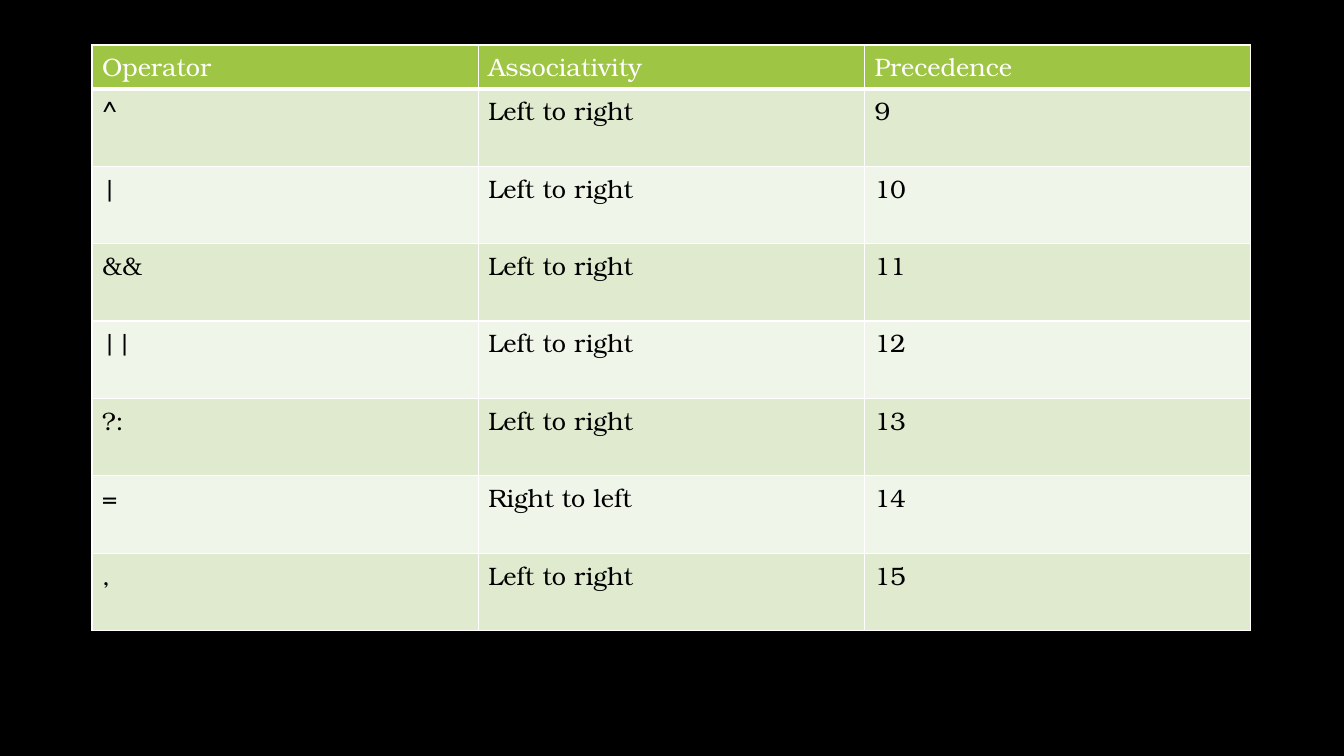
import lxml.etree
import pptx
import pptx.dml.color
import pptx.oxml.ns
import pptx.util

RGBColor = pptx.dml.color.RGBColor
BLACK = RGBColor(0x00, 0x00, 0x00)
WHITE = RGBColor(0xFF, 0xFF, 0xFF)
HEADER_GREEN = RGBColor(0x9E, 0xC5, 0x44)
BAND_COLORS = (RGBColor(0xDF, 0xEA, 0xCF), RGBColor(0xF0, 0xF5, 0xE9))

EMU_PER_PX = 914400 / 100.8
BLANK_LAYOUT = 6

HEADINGS = ("Operator", "Associativity", "Precedence")
OPERATORS = (
    ("^", "Left to right", "9"),
    ("|", "Left to right", "10"),
    ("&&", "Left to right", "11"),
    ("||", "Left to right", "12"),
    ("?:", "Left to right", "13"),
    ("=", "Right to left", "14"),
    (",", "Left to right", "15"),
)


def px(length):
    return pptx.util.Emu(round(length * EMU_PER_PX))


class SlideBuilder:
    font_name = "TeX Gyre Bonum"
    font_size = pptx.util.Pt(18)

    def __init__(self, presentation, background):
        layout = presentation.slide_layouts[BLANK_LAYOUT]
        self.slide = presentation.slides.add_slide(layout)
        fill = self.slide.background.fill
        fill.solid()
        fill.fore_color.rgb = background

    def add_border(self, cell, side, color, points):
        """Draw one cell edge; side is L, R, T or B."""
        properties = cell._tc.get_or_add_tcPr()
        line = lxml.etree.SubElement(
            properties, pptx.oxml.ns.qn(f"a:ln{side}"), w=str(pptx.util.Pt(points))
        )
        fill = lxml.etree.SubElement(line, pptx.oxml.ns.qn("a:solidFill"))
        lxml.etree.SubElement(fill, pptx.oxml.ns.qn("a:srgbClr"), val=str(color))

    def format_cell(self, cell, text, text_color, fill_color, bottom_points):
        for side, points in (("L", 1), ("R", 1), ("T", 1), ("B", bottom_points)):
            self.add_border(cell, side, WHITE, points)
        cell.fill.solid()
        cell.fill.fore_color.rgb = fill_color
        run = cell.text_frame.paragraphs[0].add_run()
        run.text = text
        run.font.name = self.font_name
        run.font.size = self.font_size
        run.font.bold = False
        run.font.color.rgb = text_color

    def add_table(self, left, top, width, height, header_height, headings, records):
        """Add a table with a header row and equal, banded body rows."""
        table = self.slide.shapes.add_table(
            len(records) + 1, len(headings), px(left), px(top), px(width), px(height)
        ).table
        for column in table.columns:
            column.width = px(width / len(headings))
        body_height = (height - header_height) / len(records)
        for index, texts in enumerate((headings, *records)):
            is_header = index == 0
            table.rows[index].height = px(header_height if is_header else body_height)
            text_color = WHITE if is_header else BLACK
            fill_color = HEADER_GREEN if is_header else BAND_COLORS[(index - 1) % 2]
            bottom_points = 3 if is_header else 1
            for cell, text in zip(table.rows[index].cells, texts):
                self.format_cell(cell, text, text_color, fill_color, bottom_points)


def main():
    presentation = pptx.Presentation()
    presentation.slide_width = px(1344)
    presentation.slide_height = px(756)
    builder = SlideBuilder(presentation, BLACK)
    builder.add_table(92, 45, 1159, 585, 43, HEADINGS, OPERATORS)
    presentation.save("out.pptx")


if __name__ == "__main__":
    main()
